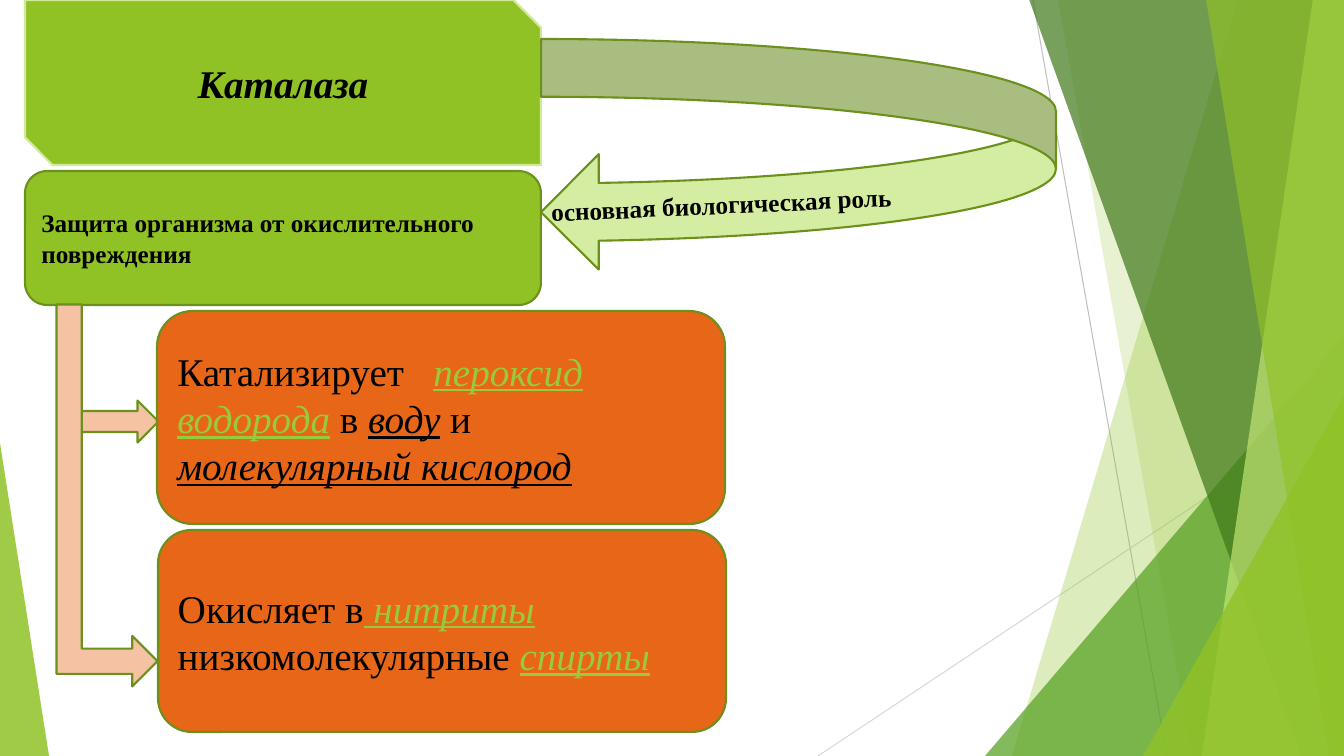
import pptx
import pptx.dml.color
import pptx.enum.shapes
import pptx.enum.text
import pptx.oxml.ns
import pptx.util
import lxml.etree

EMU_PER_PX = 914400 / 100.8
WIDTH, HEIGHT = 1344, 756
SHAPE = pptx.enum.shapes.MSO_SHAPE
ALIGN = pptx.enum.text.PP_ALIGN
THEME = {
    "font": "Times New Roman",
    "heading": 28, "label": 18, "outline": 1.5, "hairline": 0.75,
    "black": "000000", "link": "99CA3C",
    "green": "90C226", "pale green": "D5EDA2", "title edge": "D0EB96",
    "edge": "6B901C", "orange": "E76618", "peach": "F5C2A3",
    "leaf": "54A021", "dark leaf": "3F7819", "light leaf": "C0E474",
    "grey": "BFBFBF", "light grey": "D9D9D9",
}


def paint(shape, fill, edge=None, opacity=100):
    """Set fill, outline and opacity in percent from theme names."""
    shape.shadow.inherit = False
    shape.fill.solid()
    shape.fill.fore_color.rgb = pptx.dml.color.RGBColor.from_string(THEME[fill])
    if opacity < 100:
        color = shape._element.spPr.find(".//" + pptx.oxml.ns.qn("a:srgbClr"))
        alpha = lxml.etree.SubElement(color, pptx.oxml.ns.qn("a:alpha"))
        alpha.set("val", str(opacity * 1000))
    if edge:
        shape.line.color.rgb = pptx.dml.color.RGBColor.from_string(THEME[edge])
        shape.line.width = pptx.util.Pt(THEME["outline"])
    else:
        shape.line.fill.background()


def write(shape, size, runs, align=ALIGN.LEFT):
    """Fill a shape with one paragraph of (text, color, font format) runs."""
    shape.text_frame.word_wrap = True
    paragraph = shape.text_frame.paragraphs[0]
    paragraph.alignment = align
    for text, color, font_format in runs:
        run = paragraph.add_run()
        run.text = text
        run.font.color.rgb = pptx.dml.color.RGBColor.from_string(THEME[color])
        values = {"name": THEME["font"], "size": pptx.util.Pt(THEME[size]), **font_format}
        for name, value in values.items():
            setattr(run.font, name, value)


presentation = pptx.Presentation()
presentation.slide_width = round(WIDTH * EMU_PER_PX)
presentation.slide_height = round(HEIGHT * EMU_PER_PX)
slide = presentation.slides.add_slide(presentation.slide_layouts[6])
shapes = slide.shapes

# Background: thin lines, then translucent facets
for ends, color in [((1033, 0, 1167, HEIGHT), "grey"),
                    ((WIDTH, 406, 818, HEIGHT), "light grey")]:
    connector = shapes.add_connector(
        pptx.enum.shapes.MSO_CONNECTOR.STRAIGHT,
        *[round(value * EMU_PER_PX) for value in ends])
    connector.line.color.rgb = pptx.dml.color.RGBColor.from_string(THEME[color])
    connector.line.width = pptx.util.Pt(THEME["hairline"])
    lxml.etree.SubElement(connector._element.spPr, pptx.oxml.ns.qn("a:effectLst"))

# A band runs from its slanted left side to the slide's right edge;
# a triangle is given by its box and the place of its apex.
facets = [
    ("band", (1238, 1012), "green", 30),
    ("band", (1058, 1192), "green", 20),
    ("triangle", (985, 336, 359, 420, 1), "leaf", 72),
    ("band", (1029, 1301), "dark leaf", 70),
    ("band", (1313, 1202), "light leaf", 70),
    ("band", (1206, 1329), "green", 65),
    ("triangle", (1143, 396, 201, 360, 1), "green", 80),
    ("triangle", (0, 443, 49, 313, 0), "green", 85),
]
for kind, geometry, color, opacity in facets:
    if kind == "band":
        top_x, bottom_x = geometry
        builder = shapes.build_freeform(top_x, -1, scale=EMU_PER_PX)
        builder.add_line_segments([(WIDTH, -1), (WIDTH, HEIGHT), (bottom_x, HEIGHT)], close=True)
        facet = builder.convert_to_shape()
    else:
        *box, apex = geometry
        facet = shapes.add_shape(SHAPE.ISOSCELES_TRIANGLE,
                                 *[round(value * EMU_PER_PX) for value in box])
        facet.adjustments[0] = apex
    paint(facet, color, opacity=opacity)

# Diagram: boxes and arrows from back to front
plain = {"italic": False, "underline": False}
italic = {"italic": True, "underline": False}
term = {"italic": True, "underline": True}
title = [("Каталаза", "black", {"bold": True, "italic": True})]
role = [("Защита организма от окислительного повреждения", "black", {"bold": True})]
peroxide = [
    ("Катализирует   ", "black", plain), ("пероксид водорода", "link", term),
    (" ", "black", italic), ("в ", "black", plain), ("воду", "black", term),
    (" и ", "black", plain), ("молекулярный кислород", "black", term),
]
nitrites = [
    ("Окисляет в", "black", plain), (" ", "link", {"underline": True}),
    ("нитриты", "link", term), (" ", "black", term),
    ("низкомолекулярные ", "black", plain), ("спирты", "link", term),
]
diagram = [
    (SHAPE.SNIP_2_DIAG_RECTANGLE, (25, 0, 516, 165), 0, "green", "title edge",
     "heading", title, ALIGN.CENTER),
    (SHAPE.CURVED_LEFT_ARROW, (541, 39, 515, 231), 0, "pale green", "edge", None, None, None),
    (SHAPE.ROUNDED_RECTANGLE, (25, 171, 516, 134), 0, "green", "edge",
     "label", role, ALIGN.LEFT),
    (SHAPE.BENT_UP_ARROW, (66, 350, 84, 101), 90, "peach", "edge", None, None, None),
    (SHAPE.BENT_UP_ARROW, (-84, 445, 382, 101), 90, "peach", "edge", None, None, None),
    (SHAPE.ROUNDED_RECTANGLE, (157, 311, 568, 213), 0, "orange", "edge",
     "heading", peroxide, ALIGN.LEFT),
    (SHAPE.ROUNDED_RECTANGLE, (158, 530, 568, 202), 0, "orange", "edge",
     "heading", nitrites, ALIGN.LEFT),
]
for preset, box, rotation, fill, edge, size, runs, align in diagram:
    shape = shapes.add_shape(preset, *[round(value * EMU_PER_PX) for value in box])
    shape.rotation = rotation
    paint(shape, fill, edge)
    if runs:
        shape.text_frame.vertical_anchor = pptx.enum.text.MSO_ANCHOR.MIDDLE
        write(shape, size, runs, align)

arrow_label = shapes.add_textbox(*[round(value * EMU_PER_PX) for value in (541, 177, 673, 40)])
arrow_label.rotation = 357.4
write(arrow_label, "label", [("основная биологическая роль", "black", {"bold": True})])

presentation.save("out.pptx")
